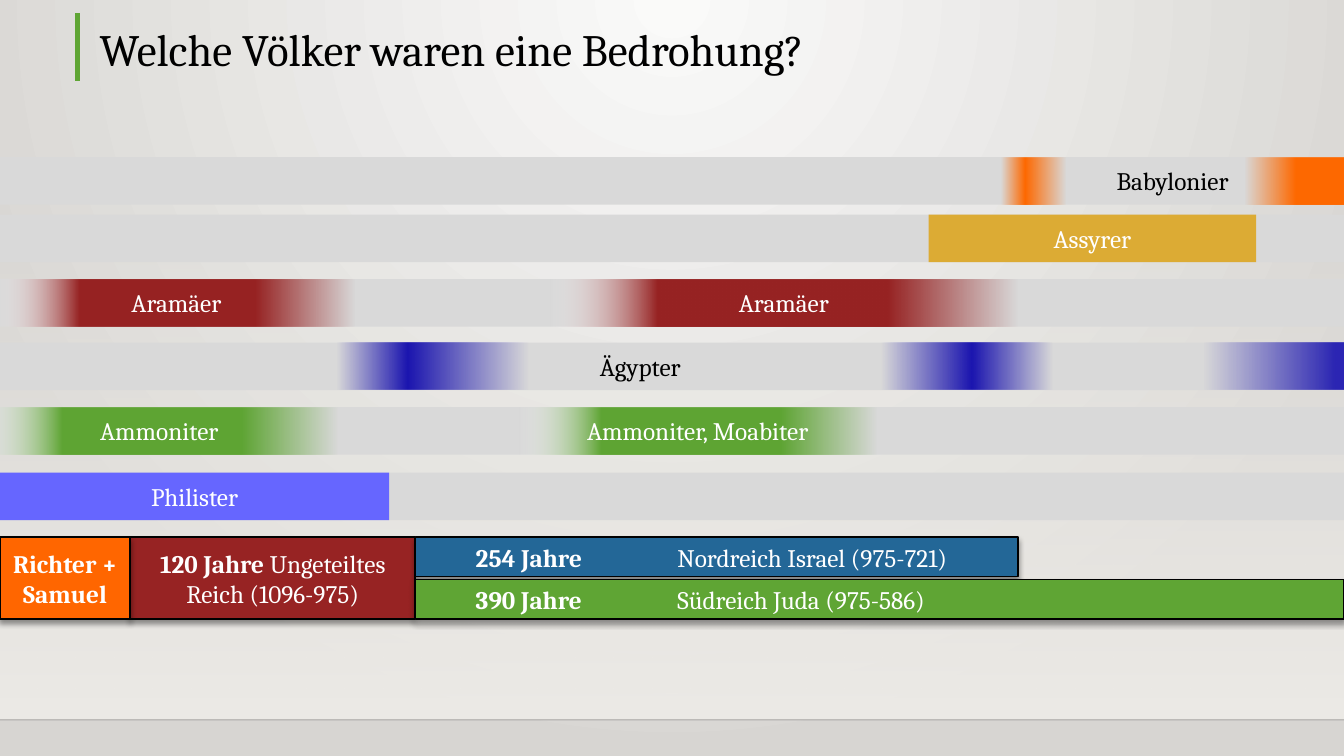
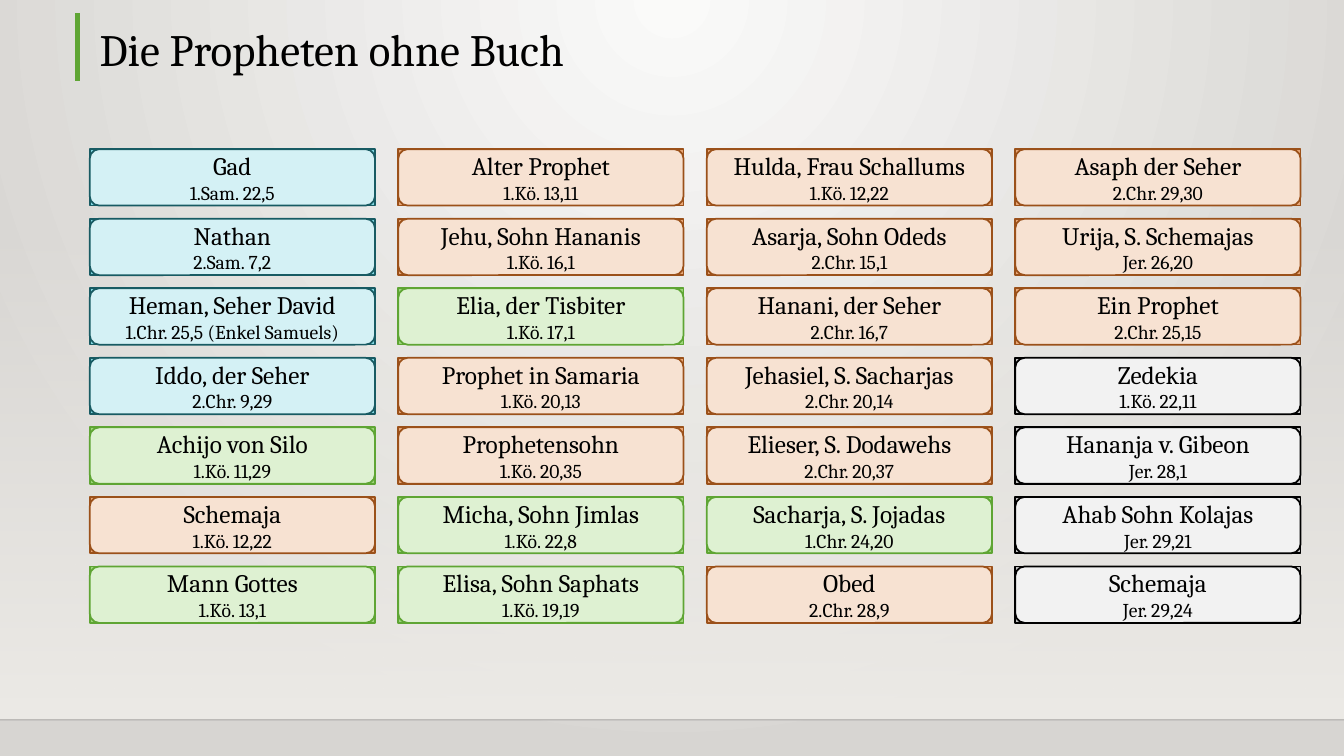
from dataclasses import dataclass

from lxml import etree
from pptx import Presentation
from pptx import util as u
from pptx.dml.color import RGBColor
from pptx.enum import shapes, text
from pptx.oxml.ns import qn


@dataclass(frozen=True)
class Theme:
    font: str = "Cambria"
    title_size: int = 32
    label_size: int = 18
    reference_size: int = 14
    outline: float = 1.25
    black: str = "000000"
    white: str = "FFFFFF"
    light: str = "FAFAF9"
    stone: str = "D7D5D2"
    sand: str = "EDEBE7"
    band: str = "D9D9D9"
    green: str = "5FA534"
    red: str = "972323"
    orange: str = "FF6900"
    judges: str = "FF6600"
    gold: str = "DCAB34"
    navy: str = "1C16B0"
    violet: str = "6666FF"
    blue: str = "236797"


theme = Theme()
WIDTH, HEIGHT = 13.33, 7.5
MIDDLE, LEFT = text.PP_ALIGN.CENTER, text.PP_ALIGN.LEFT
RECTANGLE = shapes.MSO_SHAPE.RECTANGLE


def set_gradient(element, stops, direction, **values):
    gradient = element.find(".//" + qn("a:gradFill"))
    gradient.clear()
    stop_list = etree.SubElement(gradient, qn("a:gsLst"))
    for position, color, opacity in stops:
        stop = etree.SubElement(stop_list, qn("a:gs"), pos=str(position * 1000))
        tint = etree.SubElement(stop, qn("a:srgbClr"), val=color)
        etree.SubElement(tint, qn("a:alpha"), val=str(opacity * 1000))
    if direction == "circle":
        path = etree.SubElement(gradient, qn("a:path"), path="circle")
        etree.SubElement(path, qn("a:fillToRect"), **values)
    else:
        etree.SubElement(gradient, qn("a:lin"), ang=str(direction * 60000), scaled="0")


def add_box(slide, area, fill=None, line=None, lines=(), color=theme.white,
            align=MIDDLE, kind=RECTANGLE, angle=0, tabs=()):
    shape = slide.shapes.add_shape(kind, *[u.Inches(length) for length in area])
    shape.shadow.inherit = False
    if fill is None:
        shape.fill.background()
    elif isinstance(fill, str):
        shape.fill.solid()
        shape.fill.fore_color.rgb = RGBColor.from_string(fill)
    else:
        shape.fill.gradient()
        set_gradient(shape.element, fill, angle)
    if line:
        shape.line.color.rgb = RGBColor.from_string(line)
        shape.line.width = u.Pt(theme.outline)
    else:
        shape.line.fill.background()
    frame = shape.text_frame
    frame.word_wrap = True
    for index, (size, *parts) in enumerate(lines):
        paragraph = frame.add_paragraph() if index else frame.paragraphs[0]
        paragraph.alignment = align
        if tabs:
            properties = paragraph._p.get_or_add_pPr()
            tab_list = etree.SubElement(properties, qn("a:tabLst"))
            for tab in tabs:
                etree.SubElement(tab_list, qn("a:tab"), pos=str(u.Inches(tab)), algn="l")
        for words, bold in parts:
            run = paragraph.add_run()
            run.text = words
            run.font.name = theme.font
            run.font.size = u.Pt(size)
            run.font.bold = bold
            run.font.color.rgb = RGBColor.from_string(color)
    return shape


presentation = Presentation()
presentation.slide_width = u.Inches(WIDTH)
presentation.slide_height = u.Inches(HEIGHT)
master = presentation.slide_master
master.background.fill.gradient()
set_gradient(master.element, [(0, theme.light, 100), (100, theme.stone, 100)],
             "circle", l="43000", t="0", r="43000", b="100000")

FOOTER = 7.14
RULES = [
    ((0, FOOTER, WIDTH, FOOTER), "000001", 1, 20),
    ((0.77, 0.13, 0.77, 0.8), theme.green, 3, 100),
]
slides = []
for heading in ["Welche Völker waren eine Bedrohung?", "Die Propheten ohne Buch"]:
    slide = presentation.slides.add_slide(presentation.slide_layouts[6])
    slides.append(slide)
    add_box(slide, (0, 2.2, WIDTH, FOOTER - 2.2),
            [(0, theme.sand, 0), (100, theme.sand, 100)], angle=90)
    for ends, color, width, opacity in RULES:
        rule = slide.shapes.add_connector(
            shapes.MSO_CONNECTOR.STRAIGHT, *[u.Inches(length) for length in ends])
        rule.line.color.rgb = RGBColor.from_string(color)
        rule.line.width = u.Pt(width)
        tint = rule.element.spPr.find(".//" + qn("a:srgbClr"))
        etree.SubElement(tint, qn("a:alpha"), val=str(opacity * 1000))
        etree.SubElement(rule.element.spPr, qn("a:effectLst"))
    title = add_box(slide, (0.89, 0.13, 11.57, 0.68), color=theme.black, align=LEFT,
                    lines=[(theme.title_size, (heading, False))])
    title.text_frame.vertical_anchor = text.MSO_ANCHOR.BOTTOM
    title.text_frame.paragraphs[0].line_spacing = 0.9

threats, prophets = slides

red_fade, green_fade = [
    [(0, theme.white, 0), (23, color, 100), (end, color, 100), (100, color, 0)]
    for color, end in [(theme.red, 72), (theme.green, 73)]
]
babylon_fade = [(position, theme.orange, opacity) for position, opacity in
                [(0, 0), (7, 100), (19, 0), (71, 0), (86, 100), (100, 100)]]
egypt_fade = [(position, theme.navy, opacity) for position, opacity in
              [(0, 0), (7, 100), (19, 0), (54, 0), (63, 100), (71, 0), (86, 0), (99, 91)]]

BAND_HEIGHT = 0.47
BANDS = [
    (1.56, [(9.93, 3.4, babylon_fade, "Babylonier", theme.black)]),
    (2.13, [(9.21, 3.25, theme.gold, "Assyrer", theme.white)]),
    (2.77, [(-0.02, 3.54, red_fade, "Aramäer", theme.white),
            (5.46, 4.63, red_fade, "Aramäer", theme.white)]),
    (3.4, [(3.35, 9.98, egypt_fade, "\tÄgypter", theme.black)]),
    (4.04, [(-0.19, 3.54, green_fade, "Ammoniter", theme.white),
            (5.15, 3.54, green_fade, "Ammoniter, Moabiter", theme.white)]),
    (4.69, [(0, 3.86, theme.violet, "Philister", theme.white)]),
]
for top, peoples in BANDS:
    add_box(threats, (0, top, WIDTH, BAND_HEIGHT), theme.band)
    for left, width, fill, people, color in peoples:
        tabbed = people.startswith("\t")
        add_box(threats, (left, top, width, BAND_HEIGHT), fill, color=color,
                lines=[(theme.label_size, (people, False))],
                align=LEFT if tabbed else MIDDLE, tabs=[2.5] if tabbed else [])

KINGDOM_TOP, KINGDOM_HEIGHT, HALF = 5.33, 0.81, 0.39
UNITED, DIVIDED = 1.29, 4.12
SOUTH_TOP = KINGDOM_TOP + KINGDOM_HEIGHT - HALF
KINGDOMS = [
    ((UNITED, KINGDOM_TOP, DIVIDED - UNITED, KINGDOM_HEIGHT), theme.red, MIDDLE,
     "120 Jahre ", "Ungeteiltes Reich (1096-975)"),
    ((DIVIDED, KINGDOM_TOP, 5.98, HALF), theme.blue, LEFT,
     "\t254 Jahre", "\tNordreich Israel (975-721)"),
    ((DIVIDED, SOUTH_TOP, WIDTH - DIVIDED, HALF), theme.green, LEFT,
     "\t390 Jahre", "\tSüdreich Juda (975-586)"),
    ((0, KINGDOM_TOP, UNITED, KINGDOM_HEIGHT), theme.judges, MIDDLE,
     "Richter + Samuel", ""),
]
for area, fill, align, years, realm in KINGDOMS:
    parts = [(words, bold) for words, bold in [(years, True), (realm, False)] if words]
    kingdom = add_box(threats, area, fill, theme.black, [(theme.label_size, *parts)],
                      align=align, tabs=[0.5, 2.5] if align == LEFT else [])
    effects = kingdom.element.spPr.find(qn("a:effectLst"))
    shadow = etree.SubElement(effects, qn("a:outerShdw"), blurRad=str(u.Pt(4)),
                              dist=str(u.Pt(3)), dir="5400000", rotWithShape="0")
    tint = etree.SubElement(shadow, qn("a:srgbClr"), val=theme.black)
    etree.SubElement(tint, qn("a:alpha"), val="40000")

GROUPS = {
    "teal": ("7FD6E0", "D4F1F5", "185B63"),
    "green": ("9CD579", "DEF1D2", theme.green),
    "brown": ("E8A777", "F7E2D2", "9B511A"),
    "grey": ("BFBFBF", "F2F2F2", theme.black),
}
COLUMNS = [
    [("Gad", "1.Sam. 22,5", "teal"),
     ("Nathan", "2.Sam. 7,2", "teal"),
     ("Heman, Seher David", "1.Chr. 25,5 (Enkel Samuels)", "teal"),
     ("Iddo, der Seher", "2.Chr. 9,29", "teal"),
     ("Achijo von Silo", "1.Kö. 11,29", "green"),
     ("Schemaja", "1.Kö. 12,22", "brown"),
     ("Mann Gottes", "1.Kö. 13,1", "green")],
    [("Alter Prophet", "1.Kö. 13,11", "brown"),
     ("Jehu, Sohn Hananis", "1.Kö. 16,1", "brown"),
     ("Elia, der Tisbiter", "1.Kö. 17,1", "green"),
     ("Prophet in Samaria", "1.Kö. 20,13", "brown"),
     ("Prophetensohn", "1.Kö. 20,35", "brown"),
     ("Micha, Sohn Jimlas", "1.Kö. 22,8", "green"),
     ("Elisa, Sohn Saphats", "1.Kö. 19,19", "green")],
    [("Hulda, Frau Schallums", "1.Kö. 12,22", "brown"),
     ("Asarja, Sohn Odeds", "2.Chr. 15,1", "brown"),
     ("Hanani, der Seher", "2.Chr. 16,7", "brown"),
     ("Jehasiel, S. Sacharjas", "2.Chr. 20,14", "brown"),
     ("Elieser, S. Dodawehs", "2.Chr. 20,37", "brown"),
     ("Sacharja, S. Jojadas", "1.Chr. 24,20", "green"),
     ("Obed", "2.Chr. 28,9", "brown")],
    [("Asaph der Seher", "2.Chr. 29,30", "brown"),
     ("Urija, S. Schemajas", "Jer. 26,20", "brown"),
     ("Ein Prophet", "2.Chr. 25,15", "brown"),
     ("Zedekia", "1.Kö. 22,11", "grey"),
     ("Hananja v. Gibeon", "Jer. 28,1", "grey"),
     ("Ahab Sohn Kolajas", "Jer. 29,21", "grey"),
     ("Schemaja", "Jer. 29,24", "grey")],
]
GRID_LEFT, GRID_TOP, COLUMN_STEP, ROW_STEP = 0.89, 1.48, 3.06, 0.69
CARD_WIDTH, CARD_HEIGHT = 2.83, 0.56
for column, cards in enumerate(COLUMNS):
    for row, (name, reference, group) in enumerate(cards):
        corner, fill, line = GROUPS[group]
        area = (GRID_LEFT + column * COLUMN_STEP, GRID_TOP + row * ROW_STEP,
                CARD_WIDTH, CARD_HEIGHT)
        add_box(prophets, area, corner, line)
        add_box(prophets, area, fill, line, color=theme.black,
                kind=shapes.MSO_SHAPE.ROUNDED_RECTANGLE,
                lines=[(theme.label_size, (name, False)),
                       (theme.reference_size, (reference, False))])

presentation.save("out.pptx")
